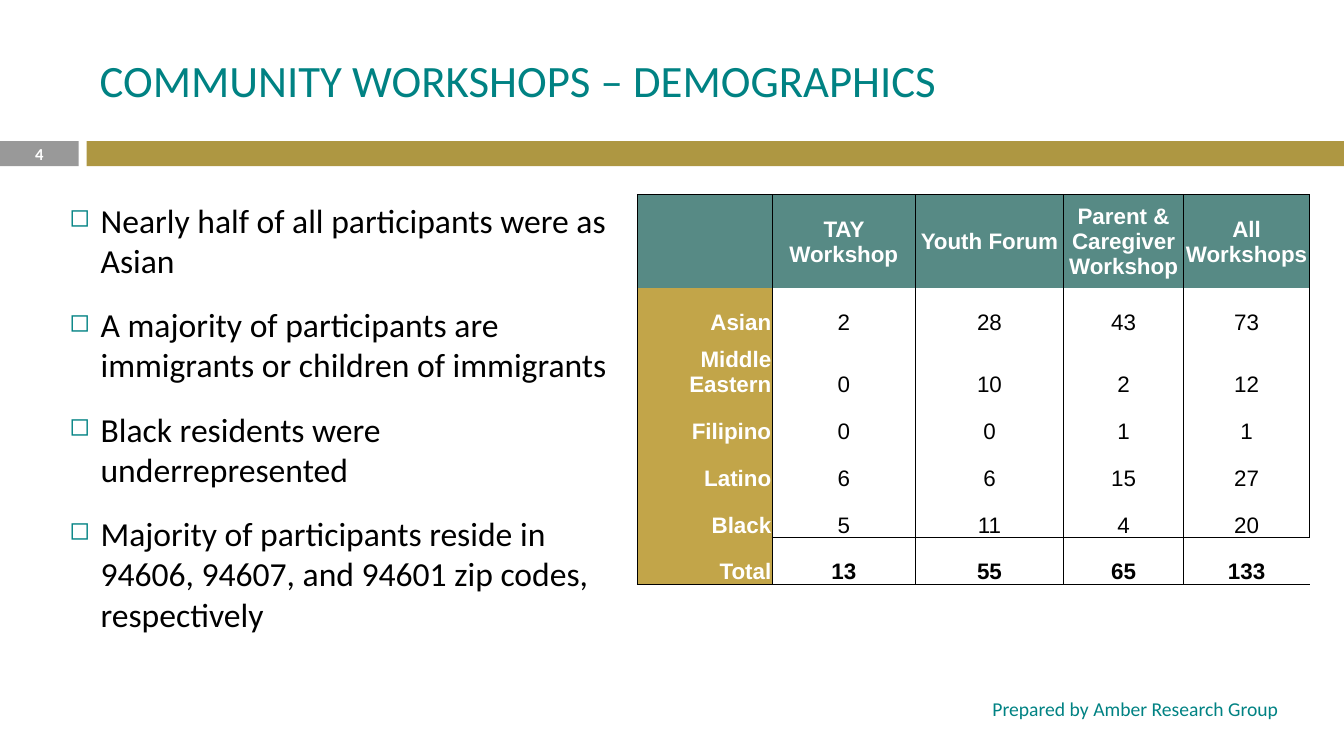
from dataclasses import dataclass

from pptx import Presentation
from pptx import util as u
from pptx.dml import color
from pptx.enum import shapes, text
from pptx.oxml import ns, xmlchemy

W, H = u.Inches(13.33), u.Inches(7.5)

COLORS = {
    "teal": "008283",
    "header": "578A85",
    "gold": "AE9742",
    "label": "C2A549",
    "grey": "999999",
    "white": "FFFFFF",
    "black": "000000",
}
ALIGN = text.PP_ALIGN
ANCHOR = text.MSO_ANCHOR


@dataclass(frozen=True)
class Box:
    """Percentages of the slide's width and height."""

    left: float
    top: float
    width: float
    height: float

    def emu(self) -> tuple[int, int, int, int]:
        return share(W, self.left), share(H, self.top), share(W, self.width), share(H, self.height)


@dataclass(frozen=True)
class Style:
    size: float
    color: str
    font: str = "Calibri"
    bold: bool = False
    align: ALIGN = ALIGN.LEFT
    anchor: ANCHOR = ANCHOR.MIDDLE


@dataclass(frozen=True)
class Bar:
    box: Box
    color: str


@dataclass(frozen=True)
class Label:
    box: Box
    words: str
    style: Style


BARS = [
    Bar(Box(0, 18.67, 5.85, 3.33), "grey"),
    Bar(Box(6.45, 18.67, 93.55, 3.33), "gold"),
]
LABELS = [
    Label(Box(6.68, 3.33, 89.2, 14.4), "COMMUNITY WORKSHOPS – DEMOGRAPHICS", Style(32, "teal")),
    Label(Box(36.61, 91.07, 59.26, 5.33), "Prepared by Amber Research Group",
          Style(14, "teal", align=ALIGN.RIGHT)),
    Label(Box(0, 18.53, 5.85, 3.6), "4", Style(11.9, "white", bold=True, align=ALIGN.CENTER)),
]

BODY_BOX = Box(3.45, 25.73, 43.89, 65.33)
BODY_STYLE = Style(24, "black", anchor=ANCHOR.TOP)
FINDINGS = [
    "Nearly half of all participants were as Asian",
    "A majority of participants are immigrants or children of immigrants",
    "Black residents were underrepresented",
    "Majority of participants reside in 94606, 94607, and 94601 zip codes, respectively",
]

TABLE_BOX = Box(47.41, 25.73, 50.04, 51.6)
COL_SHARES = [10.05, 10.65, 11.03, 8.93, 9.38]
ROW_SHARES = [12.4, 6.2, 8.2] + [6.2] * 4
ROWS = [
    ["", "TAY Workshop", "Youth Forum", "Parent & Caregiver\nWorkshop", "All Workshops"],
    ["Asian", "2", "28", "43", "73"],
    ["Middle Eastern", "0", "10", "2", "12"],
    ["Filipino", "0", "0", "1", "1"],
    ["Latino", "6", "6", "15", "27"],
    ["Black", "5", "11", "4", "20"],
    ["Total", "13", "55", "65", "133"],
]
LAST_ROW, LAST_COL = len(ROWS) - 1, len(COL_SHARES) - 1

HEADER_STYLE = Style(16, "white", "Arial", True, ALIGN.CENTER)
ROW_STYLE = Style(16, "white", "Arial", True, ALIGN.RIGHT, ANCHOR.BOTTOM)
VALUE_STYLE = Style(16, "black", "Arial", False, ALIGN.CENTER, ANCHOR.BOTTOM)
TOTAL_STYLE = Style(16, "black", "Arial", True, ALIGN.CENTER, ANCHOR.BOTTOM)


def share(length: int, percent: float) -> int:
    return round(length * percent / 100)


def rgb(name: str) -> color.RGBColor:
    return color.RGBColor.from_string(COLORS[name])


def sub(parent: xmlchemy.BaseOxmlElement, tag: str, **attrs: str) -> xmlchemy.BaseOxmlElement:
    child = parent.makeelement(ns.qn(tag), attrs)
    parent.append(child)
    return child


def write(p, words: str, style: Style) -> None:
    p.alignment = style.align
    for i, line in enumerate(words.split("\n")):
        if i:
            p.add_line_break()
        r = p.add_run()
        r.text = line
        r.font.name = style.font
        r.font.size = u.Pt(style.size)
        r.font.bold = style.bold
        r.font.color.rgb = rgb(style.color)


def add_frame(s, box: Box, style: Style):
    tf = s.shapes.add_textbox(*box.emu()).text_frame
    tf.word_wrap = True
    tf.vertical_anchor = style.anchor
    return tf


def draw_bar(s, bar: Bar) -> None:
    sp = s.shapes.add_shape(shapes.MSO_SHAPE.RECTANGLE, *bar.box.emu())
    sp.shadow.inherit = False
    sp.fill.solid()
    sp.fill.fore_color.rgb = rgb(bar.color)
    sp.line.fill.background()


def draw_label(s, label: Label) -> None:
    tf = add_frame(s, label.box, label.style)
    write(tf.paragraphs[0], label.words, label.style)


def draw_findings(s) -> None:
    tf = add_frame(s, BODY_BOX, BODY_STYLE)
    for i, finding in enumerate(FINDINGS):
        p = tf.add_paragraph() if i else tf.paragraphs[0]
        write(p, finding, BODY_STYLE)
        p.space_before, p.space_after = u.Pt(7), u.Pt(10)
        pPr = p._p.get_or_add_pPr()
        pPr.set("marL", str(u.Inches(0.44)))
        pPr.set("indent", str(u.Inches(-0.31)))
        sub(sub(pPr, "a:buClr"), "a:srgbClr", val=COLORS["teal"])
        sub(pPr, "a:buSzPct", val="75000")
        sub(pPr, "a:buChar", char="◻")


def cell_style(row: int, col: int) -> Style:
    if row == 0:
        return HEADER_STYLE
    if col == 0:
        return ROW_STYLE
    return TOTAL_STYLE if row == LAST_ROW else VALUE_STYLE


def cell_borders(row: int, col: int) -> dict[str, float]:
    right = 1 if col < LAST_COL else 0 if row == LAST_ROW else 0.5
    subtotal = 1 if col else 0
    return {
        "L": 1 if col else 0.5,
        "R": right,
        "T": {0: 0.5, LAST_ROW: subtotal}.get(row, 0),
        "B": {LAST_ROW - 1: subtotal, LAST_ROW: 0.5}.get(row, 0),
    }


def draw_cell(cell, row: int, col: int) -> None:
    tcPr = cell._tc.get_or_add_tcPr()
    for side, width in cell_borders(row, col).items():
        ln = sub(tcPr, f"a:ln{side}", w=str(u.Pt(width)))
        if width:
            sub(sub(ln, "a:solidFill"), "a:srgbClr", val=COLORS["black"])
        else:
            sub(ln, "a:noFill")
    if row and col:
        cell.fill.background()
    else:
        cell.fill.solid()
        cell.fill.fore_color.rgb = rgb("label" if row else "header")
    cell.margin_left = cell.margin_right = cell.margin_top = u.Inches(0.01)
    cell.margin_bottom = 0
    style = cell_style(row, col)
    cell.vertical_anchor = style.anchor
    if ROWS[row][col]:
        write(cell.text_frame.paragraphs[0], ROWS[row][col], style)


def draw_table(s) -> None:
    table = s.shapes.add_table(len(ROWS), len(COL_SHARES), *TABLE_BOX.emu()).table
    table.first_row = table.horz_banding = False
    for column, percent in zip(table.columns, COL_SHARES):
        column.width = share(W, percent)
    for row, percent in enumerate(ROW_SHARES):
        table.rows[row].height = share(H, percent)
        for col in range(len(COL_SHARES)):
            draw_cell(table.cell(row, col), row, col)


def main() -> None:
    prs = Presentation()
    prs.slide_width, prs.slide_height = W, H
    s = prs.slides.add_slide(prs.slide_layouts[6])
    for bar in BARS:
        draw_bar(s, bar)
    for label in LABELS:
        draw_label(s, label)
    draw_findings(s)
    draw_table(s)
    prs.save("out.pptx")


if __name__ == "__main__":
    main()
